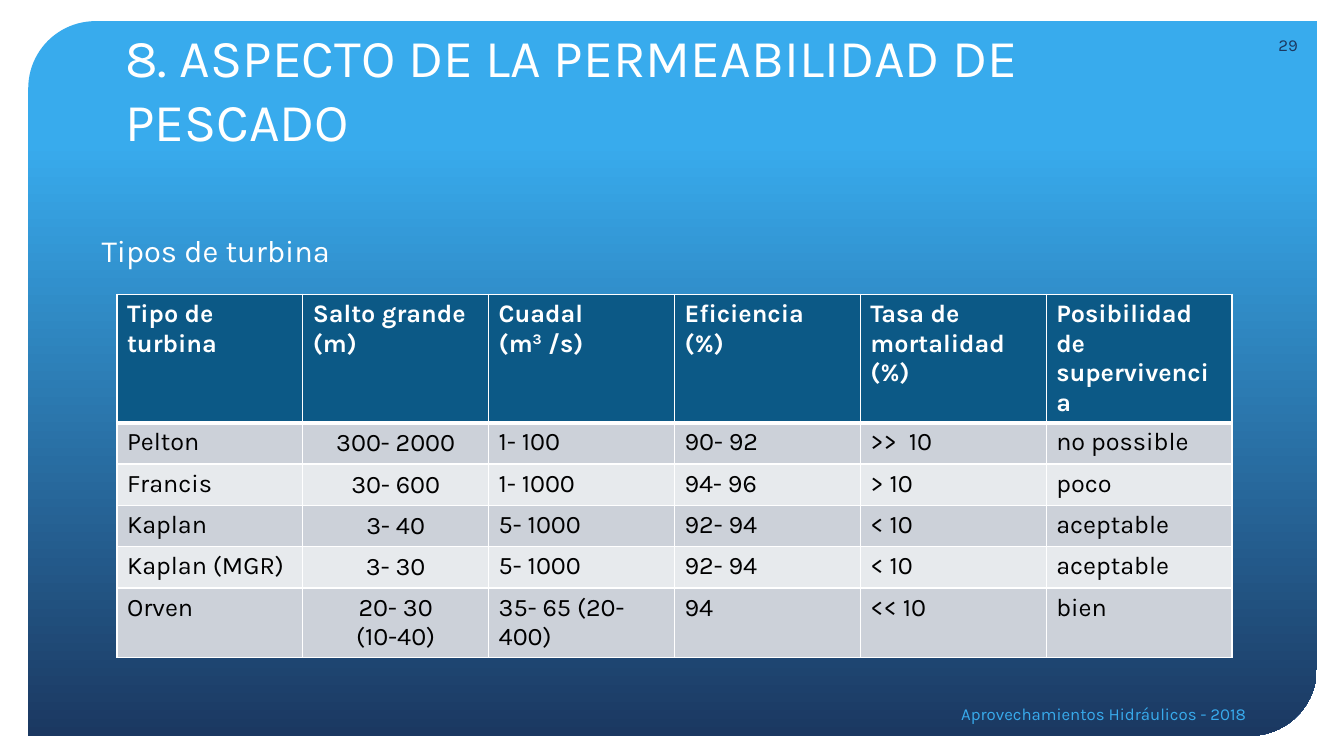
from lxml import etree
from pptx import Presentation
from pptx.dml.color import RGBColor
from pptx.enum.shapes import MSO_SHAPE
from pptx.enum.text import MSO_ANCHOR, MSO_AUTO_SIZE, PP_ALIGN
from pptx.oxml.ns import qn
from pptx.util import Pt

PX = 9144
FONT = "Karla"
LEFT, CENTER, RIGHT = PP_ALIGN.LEFT, PP_ALIGN.CENTER, PP_ALIGN.RIGHT
TOP, MIDDLE, BOTTOM = MSO_ANCHOR.TOP, MSO_ANCHOR.MIDDLE, MSO_ANCHOR.BOTTOM
COLORS = {
    "sky": "38ABED",
    "navy": "1B3861",
    "header": "0C5986",
    "odd": "CCD1D9",
    "even": "E7EAED",
    "white": "FFFFFF",
    "black": "000000",
}
TURBINES = [
    ["Tipo de turbina", "Salto grande (m)", "Cuadal\n(m3 /s)", "Eficiencia\n(%)",
     "Tasa de mortalidad\n(%)", "Posibilidad de supervivencia"],
    ["Pelton", "300- 2000", "1- 100", "90- 92", ">>  10", "no possible"],
    ["Francis", "30- 600", "1- 1000", "94- 96", "> 10", "poco"],
    ["Kaplan", "3- 40", "5- 1000", "92- 94", "< 10", "aceptable"],
    ["Kaplan (MGR)", "3- 30", "5- 1000", "92- 94", "< 10", "aceptable"],
    ["Orven", "20- 30\n(10-40)", "35- 65 (20-400)", "94", "<< 10", "bien"],
]


def px(*values):
    return [value * PX for value in values]


def rgb(name):
    return RGBColor.from_string(COLORS[name])


def format_text(tf, size, color, align=LEFT, bold=False):
    for p in tf.paragraphs:
        p.alignment = align
        for r in p.runs:
            r.font.name = FONT
            r.font.size = Pt(size)
            r.font.bold = bold
            r.font.color.rgb = rgb(color)


def add_panel(s):
    panel = s.shapes.add_shape(MSO_SHAPE.ROUND_2_DIAG_RECTANGLE, *px(28, 21, 1278, 709))
    panel.adjustments[0] = 0.094
    panel.adjustments[1] = 0
    panel.shadow.inherit = False
    panel.line.fill.background()
    panel.fill.gradient()
    panel.fill.gradient_angle = 270
    for stop, position, color in zip(panel.fill.gradient_stops, (0.17, 1), ("sky", "navy")):
        stop.position = position
        stop.color.rgb = rgb(color)
    s.shapes.title.element.addprevious(panel.element)


def set_title(s, text):
    title = s.shapes.title
    title.left, title.top, title.width, title.height = px(114, 42, 1105, 114)
    tf = title.text_frame
    tf.text = text
    tf.word_wrap = True
    tf.auto_size = MSO_AUTO_SIZE.NONE
    tf.vertical_anchor = BOTTOM
    format_text(tf, 38, "white")


def add_label(s, box, text, size, color, align=LEFT, anchor=TOP):
    tf = s.shapes.add_textbox(*px(*box)).text_frame
    tf.text = text
    tf.word_wrap = True
    tf.vertical_anchor = anchor
    format_text(tf, size, color, align)


def set_borders(cell, widths):
    tc_pr = cell._tc.get_or_add_tcPr()
    for index, (side, width) in enumerate(zip("LRTB", widths)):
        line = etree.Element(qn(f"a:ln{side}"), w=str(Pt(width)))
        fill = etree.SubElement(line, qn("a:solidFill"))
        etree.SubElement(fill, qn("a:srgbClr"), val=COLORS["white"])
        tc_pr.insert(index, line)


def fill_cell(cell, text, row, column):
    header = row == 0
    centered = column == 1 and not header
    tf = cell.text_frame
    tf.text = text
    cell.vertical_anchor = MIDDLE if centered else TOP
    cell.fill.solid()
    cell.fill.fore_color.rgb = rgb("header" if header else "odd" if row % 2 else "even")
    format_text(tf, 18, "white" if header else "black", CENTER if centered else LEFT, header)
    set_borders(cell, (1, 1, 3 if row == 1 else 1, 3 if header else 1))


def raise_exponent(cell):
    p = cell.text_frame.paragraphs[1]
    p.text = ""
    for text in ("(m", "3", " /s)"):
        p.add_run().text = text
    format_text(cell.text_frame, 18, "white", bold=True)
    p.runs[1].font._element.set("baseline", "30000")


def add_turbine_table(s):
    frame = s.shapes.add_table(len(TURBINES), len(TURBINES[0]), *px(116, 292, 1106, 332))
    table = frame.table
    for row, texts in enumerate(TURBINES):
        table.rows[row].height = 41 * PX
        for column, text in enumerate(texts):
            fill_cell(table.cell(row, column), text, row, column)
    raise_exponent(table.cell(0, 2))
    frame.height = 332 * PX


def main():
    prs = Presentation()
    prs.slide_width, prs.slide_height = px(1333, 750)
    s = prs.slides.add_slide(prs.slide_layouts[5])
    add_panel(s)
    set_title(s, "8. ASPECTO DE LA PERMEABILIDAD DE PESCADO")
    add_turbine_table(s)
    add_label(s, (482, 688, 764, 40), "Aprovechamientos Hidráulicos - 2018", 12, "sky", RIGHT, MIDDLE)
    add_label(s, (1225, 24, 72, 40), "29", 12, "navy", RIGHT, MIDDLE)
    add_label(s, (91, 225, 383, 47), "Tipos de turbina", 22, "white")
    prs.save("out.pptx")


if __name__ == "__main__":
    main()
